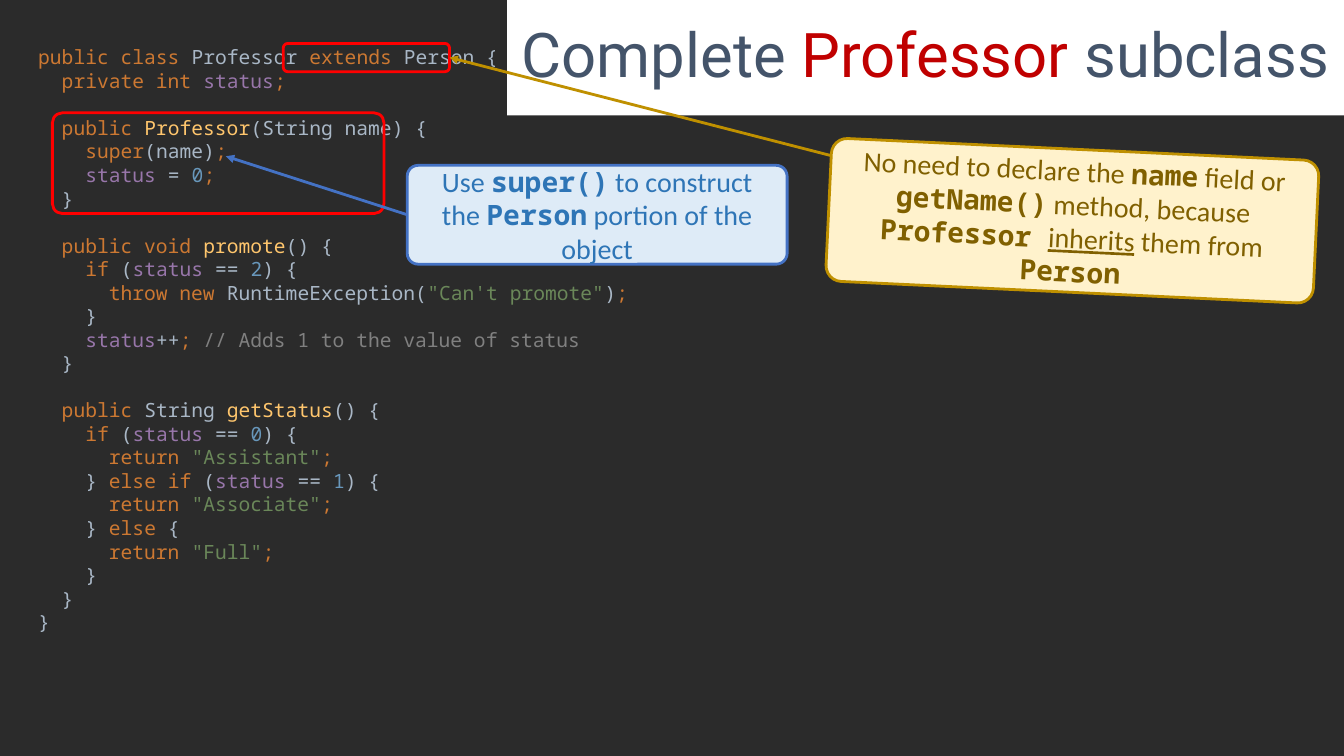
from dataclasses import dataclass

from lxml.etree import SubElement
from pptx import Presentation
from pptx.dml.color import RGBColor
from pptx.enum.shapes import MSO_CONNECTOR, MSO_SHAPE
from pptx.enum.text import MSO_ANCHOR, MSO_AUTO_SIZE, PP_ALIGN
from pptx.oxml.ns import qn
from pptx.util import Pt


@dataclass(frozen=True)
class Theme:
    background: str = "2B2B2B"
    title_fill: str = "FFFFFF"
    title_text: str = "44546A"
    title_accent: str = "C00000"
    highlight: str = "FF0000"
    blue: tuple = ("DEEBF7", "4472C4", "2E75B6")  # fill, line, text
    gold: tuple = ("FFF2CC", "BF9000", "806000")
    title_font: str = "Roboto"
    note_font: str = "Calibri"
    code_font: str = "Noto Sans Mono"
    title_size: int = 44
    note_size: int = 20
    code_size: int = 14
    line_width: int = 2


KEYWORD, PLAIN, FIELD, METHOD = "CC7832", "A9B7C6", "9876AA", "FFC66D"
NUMBER, STRING, COMMENT = "6897BB", "6A8759", "808080"

END = (KEYWORD, ";")


def status_test(indent, keyword, value):
    return [(PLAIN, indent), (KEYWORD, keyword), (PLAIN, "("), (FIELD, "status "),
            (PLAIN, "== "), (NUMBER, value), (PLAIN, ") {")]


def return_line(rank):
    return [(KEYWORD, "      return "), (STRING, f'"{rank}"'), END]


CODE = [
    [(KEYWORD, "public class "), (PLAIN, "Professor "), (KEYWORD, "extends "), (PLAIN, "Person {")],
    [(KEYWORD, "  private int "), (FIELD, "status"), END],
    [],
    [(KEYWORD, "  public "), (METHOD, "Professor"), (PLAIN, "(String name) {")],
    [(KEYWORD, "    super"), (PLAIN, "(name)"), END],
    [(FIELD, "    status "), (PLAIN, "= "), (NUMBER, "0"), END],
    [(PLAIN, "  }")],
    [],
    [(KEYWORD, "  public void "), (METHOD, "promote"), (PLAIN, "() {")],
    status_test("    ", "if ", "2"),
    [(KEYWORD, "      throw new "), (PLAIN, "RuntimeException("),
     (STRING, '"Can\'t promote"'), (PLAIN, ")"), END],
    [(PLAIN, "    }")],
    [(FIELD, "    status"), (PLAIN, "++"), (KEYWORD, "; "),
     (COMMENT, "// Adds 1 to the value of status")],
    [(PLAIN, "  }")],
    [],
    [(KEYWORD, "  public "), (PLAIN, "String "), (METHOD, "getStatus"), (PLAIN, "() {")],
    status_test("    ", "if ", "0"),
    return_line("Assistant"),
    status_test("    } ", "else if ", "1"),
    return_line("Associate"),
    [(PLAIN, "    } "), (KEYWORD, "else "), (PLAIN, "{")],
    return_line("Full"),
    [(PLAIN, "    }")],
    [(PLAIN, "  }")],
    [(PLAIN, "}")],
]


class SlideBuilder:
    def __init__(self, presentation, theme):
        self.theme = theme
        self.slide = presentation.slides.add_slide(presentation.slide_layouts[5])
        fill = self.slide.background.fill
        fill.solid()
        fill.fore_color.rgb = RGBColor.from_string(theme.background)

    def run(self, paragraph, text, font, size, color, bold=False, underline=False):
        run = paragraph.add_run()
        run.text = text
        run.font.name = font
        run.font.size = Pt(size)
        run.font.color.rgb = RGBColor.from_string(color)
        run.font.bold = bold
        run.font.underline = underline

    def title(self, box, pieces):
        """Fill the title placeholder with (text, colour) pieces."""
        heading = self.slide.shapes.title
        heading.left, heading.top, heading.width, heading.height = map(Pt, box)
        heading.fill.solid()
        heading.fill.fore_color.rgb = RGBColor.from_string(self.theme.title_fill)
        frame = heading.text_frame
        frame.word_wrap = True
        frame.auto_size = MSO_AUTO_SIZE.NONE
        frame.vertical_anchor = MSO_ANCHOR.MIDDLE
        paragraph = frame.paragraphs[0]
        paragraph.alignment = PP_ALIGN.CENTER
        paragraph.line_spacing = 0.9
        for text, color in pieces:
            self.run(paragraph, text, self.theme.title_font, self.theme.title_size, color)

    def code(self, box, lines):
        """Set code as one paragraph of broken lines, each a list of (colour, text)."""
        frame = self.slide.shapes.add_textbox(*map(Pt, box)).text_frame
        frame.word_wrap = True
        frame.auto_size = MSO_AUTO_SIZE.SHAPE_TO_FIT_TEXT
        paragraph = frame.paragraphs[0]
        paragraph.font.name = self.theme.code_font
        paragraph.font.size = Pt(self.theme.code_size)
        for number, line in enumerate(lines):
            if number:
                paragraph.add_line_break()
            for color, text in line:
                self.run(paragraph, text, self.theme.code_font, self.theme.code_size, color)
        for line_break in paragraph._p.findall(qn("a:br")):
            SubElement(line_break, qn("a:rPr"), sz=str(self.theme.code_size * 100))
            SubElement(line_break[0], qn("a:latin"), typeface=self.theme.code_font)

    def rounded(self, box, corner, line_color):
        frame = self.slide.shapes.add_shape(MSO_SHAPE.ROUNDED_RECTANGLE, *map(Pt, box))
        frame.adjustments[0] = corner
        frame.shadow.inherit = False
        frame.fill.background()
        frame.line.color.rgb = RGBColor.from_string(line_color)
        frame.line.width = Pt(self.theme.line_width)
        return frame

    def highlight(self, box, corner):
        return self.rounded(box, corner, self.theme.highlight)

    def note(self, box, palette, pieces, rotation=0):
        """Draw a callout; each piece is (text, is_code) or (text, is_code, underline)."""
        fill_color, line_color, text_color = palette
        callout = self.rounded(box, 0.11, line_color)
        callout.rotation = rotation
        callout.fill.solid()
        callout.fill.fore_color.rgb = RGBColor.from_string(fill_color)
        frame = callout.text_frame
        frame.word_wrap = True
        frame.vertical_anchor = MSO_ANCHOR.MIDDLE
        paragraph = frame.paragraphs[0]
        paragraph.alignment = PP_ALIGN.CENTER
        for text, is_code, *underline in pieces:
            font = self.theme.code_font if is_code else self.theme.note_font
            self.run(paragraph, text, font, self.theme.note_size, text_color,
                     bold=is_code, underline=bool(underline))
        return callout

    def arrow(self, start, end, color):
        pointer = self.slide.shapes.add_connector(
            MSO_CONNECTOR.STRAIGHT, *map(Pt, (*start, *end)))
        pointer.line.color.rgb = RGBColor.from_string(color)
        pointer.line.width = Pt(self.theme.line_width)
        SubElement(pointer.line._get_or_add_ln(), qn("a:tailEnd"), type="triangle")
        SubElement(pointer._element.spPr, qn("a:effectLst"))
        return pointer


def main():
    theme = Theme()
    presentation = Presentation()
    presentation.slide_width, presentation.slide_height = Pt(960), Pt(540)
    page = SlideBuilder(presentation, theme)

    page.title((362.2, 0, 597.8, 82.5), [
        ("Complete ", theme.title_text),
        ("Professor", theme.title_accent),
        (" subclass", theme.title_text),
    ])
    page.code((20.2, 28.8, 450, 448.6), CODE)
    extends_clause = page.highlight((202.3, 31, 118.8, 20.2), 0.16)
    page.highlight((37.4, 80.6, 236.9, 72), 0.1)

    super_note = page.note((290.9, 118.1, 271.4, 70.6), theme.blue, [
        ("Use ", False), ("super()", True), (" to construct the ", False),
        ("Person", True), (" portion of the object", False),
    ])
    super_arrow = page.arrow((290.9, 153.4), (161.3, 111.6), theme.blue[1])
    super_arrow.begin_connect(super_note, 1)

    inherit_arrow = page.arrow((595.4, 111.6), (321.1, 41.1), theme.gold[1])
    inherit_arrow.end_connect(extends_clause, 3)
    page.note((591.8, 106.6, 348.5, 102.2), theme.gold, [
        ("No need to declare the ", False), ("name", True), (" field or ", False),
        ("getName()", True), (" method, because ", False), ("Professor ", True),
        ("inherits", False, True), (" them from ", False), ("Person", True),
    ], rotation=2.7)

    presentation.save("out.pptx")


if __name__ == "__main__":
    main()
